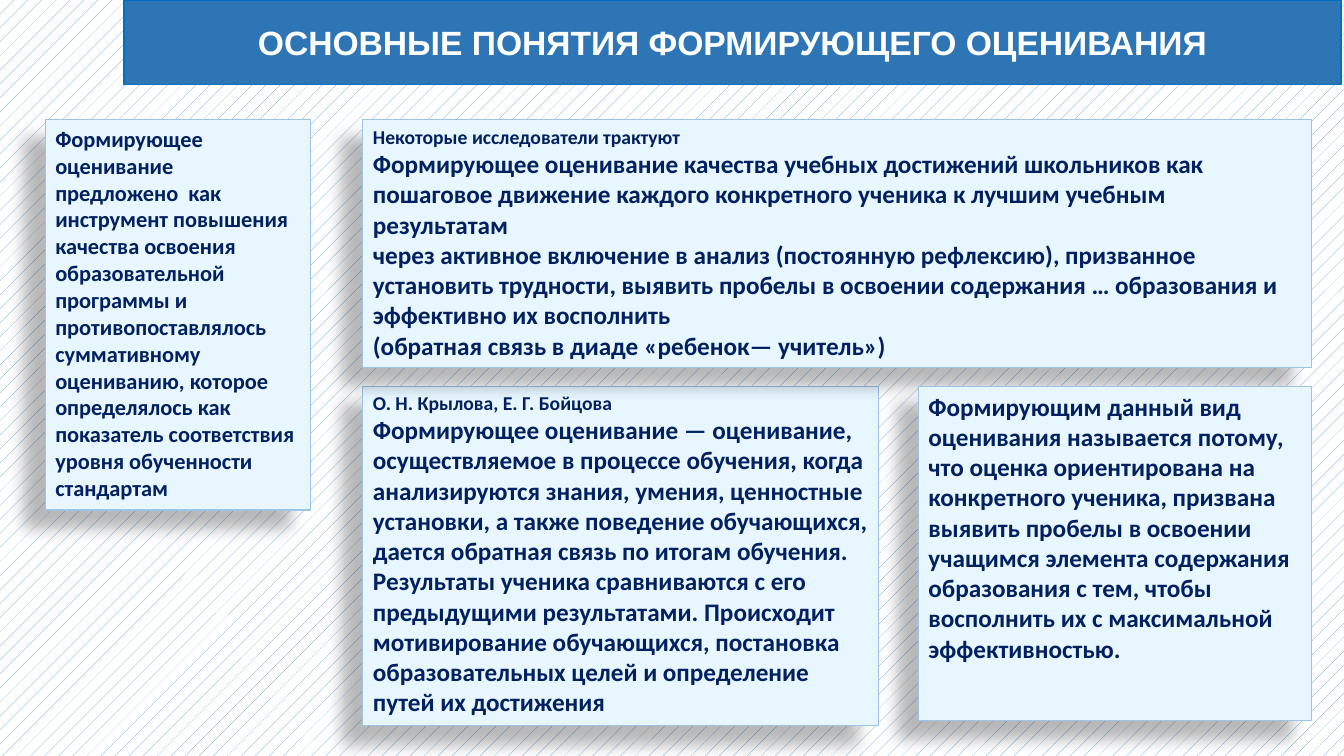
import pptx
import pptx.util
import pptx.oxml
import pptx.oxml.ns
from pptx.dml.color import RGBColor
from pptx.enum.dml import MSO_PATTERN
from pptx.enum.shapes import MSO_SHAPE
from pptx.enum.text import MSO_ANCHOR, PP_ALIGN

WHITE = RGBColor(0xFF, 0xFF, 0xFF)
HATCH_BLUE = RGBColor(0x5B, 0x9B, 0xD5)
BANNER_BLUE = RGBColor(0x2E, 0x75, 0xB6)
BANNER_EDGE = RGBColor(0x00, 0x70, 0xC0)
CARD_FILL = RGBColor(0xE7, 0xF6, 0xFF)
CARD_EDGE = RGBColor(0x9D, 0xC3, 0xE6)
NAVY = RGBColor(0x00, 0x20, 0x60)

# Content: each card has its place (left, top, right, bottom) and (text, size) lines
TITLE = "ОСНОВНЫЕ ПОНЯТИЯ ФОРМИРУЮЩЕГО ОЦЕНИВАНИЯ"
SIDE_LEFT, SIDE_RIGHT = 0.45, 3.08
MAIN_LEFT, MIDDLE_RIGHT, LAST_LEFT, MAIN_RIGHT = 3.6, 8.71, 9.11, 13.01
TOP_ROW, LOWER_ROW = 1.19, 3.83
CARDS = [
    ((MAIN_LEFT, LOWER_ROW, MIDDLE_RIGHT, 7.2), [
        ("О. Н. Крылова, Е. Г. Бойцова", 14),
        ("Формирующее оценивание — оценивание, осуществляемое в процессе обучения, "
         "когда анализируются знания, умения, ценностные установки, а также поведение "
         "обучающихся, дается обратная связь по итогам обучения.", 18),
        ("Результаты ученика сравниваются с его предыдущими результатами. Происходит "
         "мотивирование обучающихся, постановка образовательных целей и определение "
         "путей их достижения", 18),
    ]),
    ((MAIN_LEFT, TOP_ROW, MAIN_RIGHT, 3.65), [
        ("Некоторые исследователи трактуют", 14),
        ("Формирующее оценивание качества учебных достижений школьников как", 18),
        ("пошаговое движение каждого конкретного ученика к лучшим учебным результатам", 18),
        ("через активное включение в анализ (постоянную рефлексию), призванное "
         "установить трудности, выявить пробелы в освоении содержания … образования "
         "и эффективно их восполнить", 18),
        ("(обратная связь в диаде «ребенок— учитель»)", 18),
    ]),
    ((SIDE_LEFT, TOP_ROW, SIDE_RIGHT, 5.06), [
        ("Формирующее оценивание предложено  как инструмент повышения качества "
         "освоения образовательной программы и противопоставлялось суммативному "
         "оцениванию, которое определялось как показатель соответствия уровня "
         "обученности стандартам", 16),
    ]),
    ((LAST_LEFT, LOWER_ROW, MAIN_RIGHT, 7.15), [
        ("Формирующим данный вид оценивания называется потому, что оценка "
         "ориентирована на конкретного ученика, призвана выявить пробелы в освоении "
         "учащимся элемента содержания образования с тем, чтобы восполнить их с "
         "максимальной эффективностью.", 18),
    ]),
]


def add_box(page, place, fill, edge, edge_width):
    left, top, right, bottom = place
    box = page.shapes.add_shape(
        MSO_SHAPE.RECTANGLE,
        *(pptx.util.Inches(v) for v in (left, top, right - left, bottom - top)))
    box.shadow.inherit = False
    box.fill.solid()
    box.fill.fore_color.rgb = fill
    box.line.color.rgb = edge
    box.line.width = pptx.util.Pt(edge_width)
    box.text_frame.word_wrap = True
    return box


def write_lines(box, lines, font, color, align, anchor):
    frame = box.text_frame
    frame.vertical_anchor = anchor
    for number, (text, size) in enumerate(lines):
        para = frame.add_paragraph() if number else frame.paragraphs[0]
        para.alignment = align
        span = para.add_run()
        span.text = text
        span.font.name = font
        span.font.size = pptx.util.Pt(size)
        span.font.bold = True
        span.font.color.rgb = color


def add_shadow(box):
    effects = box._element.spPr.find(pptx.oxml.ns.qn("a:effectLst"))
    effects.append(pptx.oxml.parse_xml(
        f'<a:outerShdw {pptx.oxml.ns.nsdecls("a")} blurRad="{pptx.util.Pt(11.8)}" '
        f'dist="{pptx.util.Pt(19.7)}" dir="{141 * 60000}" algn="tr" rotWithShape="0">'
        '<a:srgbClr val="000000"><a:alpha val="28000"/></a:srgbClr></a:outerShdw>'))


def main():
    deck = pptx.Presentation()
    deck.slide_width = pptx.util.Inches(13.33)
    deck.slide_height = pptx.util.Inches(7.5)
    page = deck.slides.add_slide(deck.slide_layouts[6])

    # Hatched background
    backdrop = page.background.fill
    backdrop.patterned()
    backdrop.pattern = MSO_PATTERN.PERCENT_5
    backdrop.fore_color.rgb = HATCH_BLUE
    backdrop.back_color.rgb = WHITE

    # Title banner
    banner = add_box(page, (1.23, 0, 13.3, 0.84), BANNER_BLUE, BANNER_EDGE, 1)
    write_lines(banner, [(TITLE, 24)], "Arial", WHITE, PP_ALIGN.CENTER, MSO_ANCHOR.MIDDLE)

    # Definition cards
    for place, lines in CARDS:
        card = add_box(page, place, CARD_FILL, CARD_EDGE, 0.75)
        add_shadow(card)
        write_lines(card, lines, "Calibri", NAVY, PP_ALIGN.LEFT, MSO_ANCHOR.TOP)

    deck.save("out.pptx")


if __name__ == "__main__":
    main()
